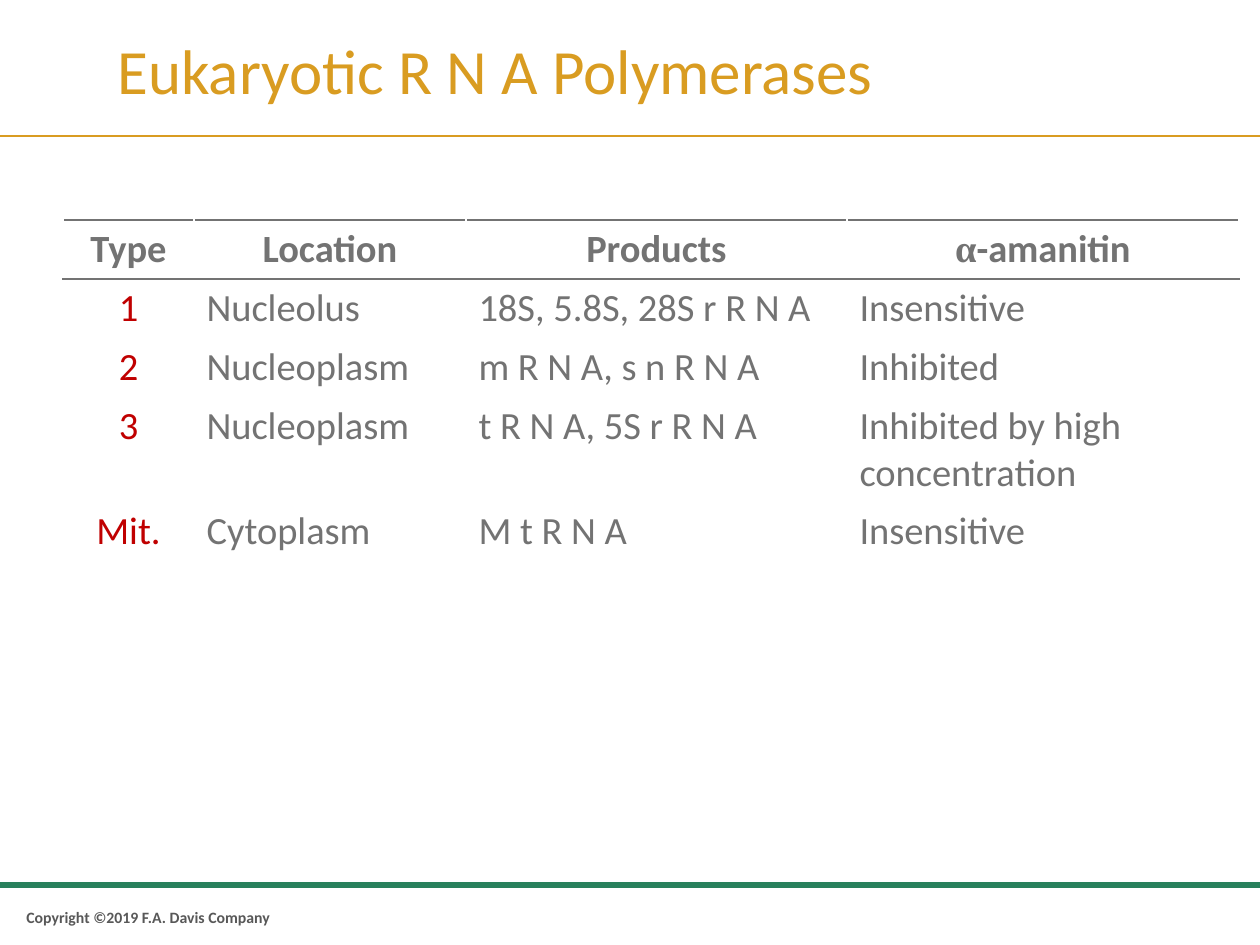
from lxml import etree
from pptx import Presentation
from pptx import util as u
from pptx.dml.color import RGBColor
from pptx.enum import shapes, text
from pptx.oxml.ns import qn

PX = u.Inches(1) / 126
COLORS = {
    "gold": "D99C21",
    "green": "28805C",
    "gray": "737373",
    "dark": "585858",
    "red": "C00000",
    "white": "FFFFFF",
}
COLUMN_WIDTHS = [131, 272, 381, 392]
ROW_HEIGHT = 52
ROWS = [
    ("Type", "Location", "Products", "α-amanitin"),
    ("1", "Nucleolus", "18S, 5.8S, 28S r R N A", "Insensitive"),
    ("2", "Nucleoplasm", "m R N A, s n R N A", "Inhibited"),
    ("3", "Nucleoplasm", "t R N A, 5S r R N A", "Inhibited by high concentration"),
    ("Mit.", "Cytoplasm", "M t R N A", "Insensitive"),
]


def px(*lengths):
    return [u.Emu(round(length * PX)) for length in lengths]


def rgb(color):
    return RGBColor.from_string(COLORS[color])


def format_run(run, size, color, bold=False, face="Calibri"):
    run.font.name = face
    run.font.size = u.Pt(size)
    run.font.bold = bold
    run.font.color.rgb = rgb(color)


def add_title(slide, wording):
    title = slide.shapes.title
    title.left, title.top, title.width, title.height = px(105, 33, 1135, 82)
    frame = title.text_frame
    frame.text = wording
    frame.word_wrap = True
    frame.auto_size = text.MSO_AUTO_SIZE.SHAPE_TO_FIT_TEXT
    frame.vertical_anchor = text.MSO_ANCHOR.MIDDLE
    paragraph = frame.paragraphs[0]
    paragraph.alignment = text.PP_ALIGN.LEFT
    paragraph.line_spacing = 0.9
    format_run(paragraph.runs[0], 36, "gold")


def add_title_rule(slide):
    start_x, start_y, end_x, end_y = px(0, 136, 1260, 136)
    rule = slide.shapes.add_connector(
        shapes.MSO_CONNECTOR.STRAIGHT, start_x, start_y, end_x, end_y)
    rule.line.color.rgb = rgb("gold")
    rule.line.width = u.Pt(1)
    etree.SubElement(rule._element.spPr, qn("a:effectLst"))


def add_footer(slide, wording):
    band = slide.shapes.add_shape(
        shapes.MSO_SHAPE.RECTANGLE, *px(0, 882, 1260, 6))
    band.shadow.inherit = False
    band.fill.solid()
    band.fill.fore_color.rgb = rgb("green")
    band.line.fill.background()

    copyright_box = slide.shapes.add_textbox(*px(14, 892, 334, 50))
    frame = copyright_box.text_frame
    frame.word_wrap = True
    frame.vertical_anchor = text.MSO_ANCHOR.MIDDLE
    frame.text = wording
    format_run(frame.paragraphs[0].runs[0], 9, "dark", bold=True)


def set_borders(cell, top, bottom):
    """Draw white sides, with the given colours above and below the cell."""
    properties = cell._tc.get_or_add_tcPr()
    sides = {"a:lnL": "white", "a:lnR": "white", "a:lnT": top, "a:lnB": bottom}
    for side, color in sides.items():
        line = etree.SubElement(properties, qn(side), w=str(u.Pt(1)))
        fill = etree.SubElement(line, qn("a:solidFill"))
        etree.SubElement(fill, qn("a:srgbClr"), val=COLORS[color])


def fill_cell(cell, wording, row, column):
    is_header = row == 0
    set_borders(cell,
                top="gray" if row <= 1 else "white",
                bottom="gray" if is_header else "white")
    cell.fill.background()
    paragraph = cell.text_frame.paragraphs[0]
    if is_header or column == 0:
        paragraph.alignment = text.PP_ALIGN.CENTER
    color = "red" if column == 0 and not is_header else "gray"
    if wording.startswith("α"):
        greek = paragraph.add_run()
        greek.text, wording = wording[0], wording[1:]
        format_run(greek, 22, color, is_header, "Times New Roman")
    run = paragraph.add_run()
    run.text = wording
    format_run(run, 22, color, is_header)


def add_polymerase_table(slide):
    table = slide.shapes.add_table(
        len(ROWS), len(COLUMN_WIDTHS),
        *px(63, 220, sum(COLUMN_WIDTHS), ROW_HEIGHT * len(ROWS))).table
    table.horz_banding = False
    for column, width in zip(table.columns, px(*COLUMN_WIDTHS)):
        column.width = width
    for row, entries in enumerate(ROWS):
        table.rows[row].height = px(ROW_HEIGHT)[0]
        for column, wording in enumerate(entries):
            fill_cell(table.cell(row, column), wording, row, column)


def main():
    presentation = Presentation()
    presentation.slide_width, presentation.slide_height = px(1260, 945)
    slide = presentation.slides.add_slide(presentation.slide_layouts[5])
    add_title_rule(slide)
    add_footer(slide, "Copyright ©2019 F.A. Davis Company")
    add_title(slide, "Eukaryotic R N A Polymerases")
    add_polymerase_table(slide)
    presentation.save("out.pptx")


if __name__ == "__main__":
    main()
